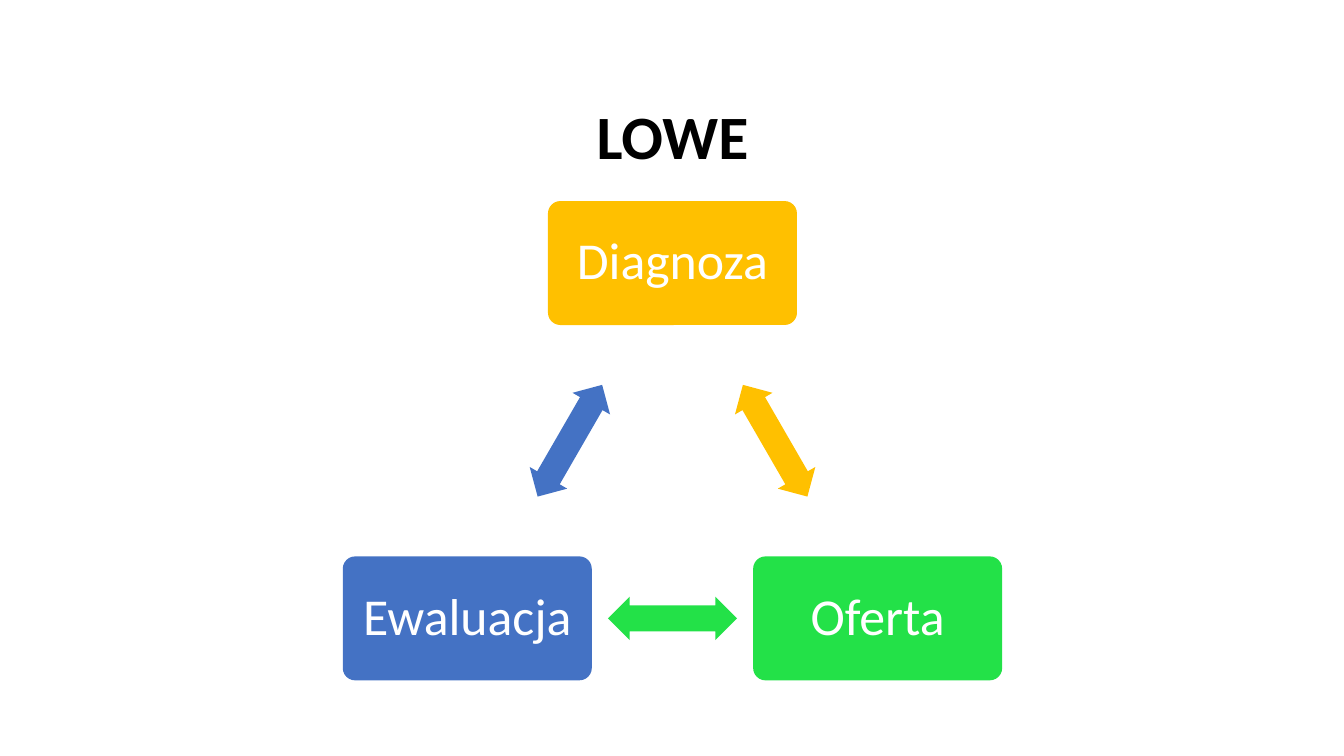
import math

import pptx
import pptx.dml.color
import pptx.enum.shapes
import pptx.enum.text
import pptx.util

Inches = pptx.util.Inches
Color = pptx.dml.color.RGBColor
Shape = pptx.enum.shapes.MSO_SHAPE
Align = pptx.enum.text.PP_ALIGN
Anchor = pptx.enum.text.MSO_ANCHOR

BLACK = Color(0x00, 0x00, 0x00)
WHITE = Color(0xFF, 0xFF, 0xFF)
GOLD = Color(0xFF, 0xC0, 0x00)
GREEN = Color(0x23, 0xE1, 0x48)
BLUE = Color(0x44, 0x72, 0xC4)

STEPS = [("Diagnoza", GOLD), ("Oferta", GREEN), ("Ewaluacja", BLUE)]
MID_X, MID_Y, RADIUS = 6.67, 4.96, 2.35
TURN = 360 / len(STEPS)


def write(frame, text, size, color, bold=False):
    frame.word_wrap = True
    frame.vertical_anchor = Anchor.MIDDLE
    para = frame.paragraphs[0]
    para.text = text
    para.alignment = Align.CENTER
    para.line_spacing = 0.9
    font = para.font
    font.name = "Calibri"
    font.size = pptx.util.Pt(size)
    font.bold = bold
    font.color.rgb = color


def add_title(slide, text):
    title = slide.shapes.title
    title.left, title.top = Inches(0.92), Inches(0.91)
    title.width, title.height = Inches(11.5), Inches(0.94)
    write(title.text_frame, text, 44, BLACK, bold=True)


def add_block(slide, kind, center, width, height, color):
    """Add a plain filled shape around its center."""
    x, y = center
    block = slide.shapes.add_shape(
        kind, Inches(x - width / 2), Inches(y - height / 2),
        Inches(width), Inches(height))
    block.shadow.inherit = False
    block.fill.solid()
    block.fill.fore_color.rgb = color
    block.line.fill.background()
    return block


def add_step(slide, center, text, color):
    box = add_block(slide, Shape.ROUNDED_RECTANGLE, center, 2.47, 1.23, color)
    box.adjustments[0] = 0.1
    frame = box.text_frame
    frame.margin_left = frame.margin_right = Inches(0.15)
    frame.margin_top = frame.margin_bottom = Inches(0.15)
    write(frame, text, 37, WHITE)


def add_arrow(slide, start, end, angle, color):
    """Add a double arrow halfway between two step centers."""
    center = [(a + b) / 2 for a, b in zip(start, end)]
    arrow = add_block(slide, Shape.LEFT_RIGHT_ARROW, center, 1.28, 0.43, color)
    arrow.adjustments[0] = 0.6
    arrow.adjustments[1] = 0.5
    arrow.rotation = angle


def corner(index):
    """Return the center of a step on the circle, clockwise from the top."""
    angle = math.radians(index * TURN)
    return MID_X + RADIUS * math.sin(angle), MID_Y - RADIUS * math.cos(angle)


def main():
    deck = pptx.Presentation()
    deck.slide_width, deck.slide_height = Inches(13.33), Inches(7.5)
    slide = deck.slides.add_slide(deck.slide_layouts.get_by_name("Title Only"))
    add_title(slide, "LOWE")
    for index, (text, color) in enumerate(STEPS):
        add_step(slide, corner(index), text, color)
        add_arrow(slide, corner(index), corner(index + 1),
                  TURN * (index + 0.5), color)
    deck.save("out.pptx")


if __name__ == "__main__":
    main()
